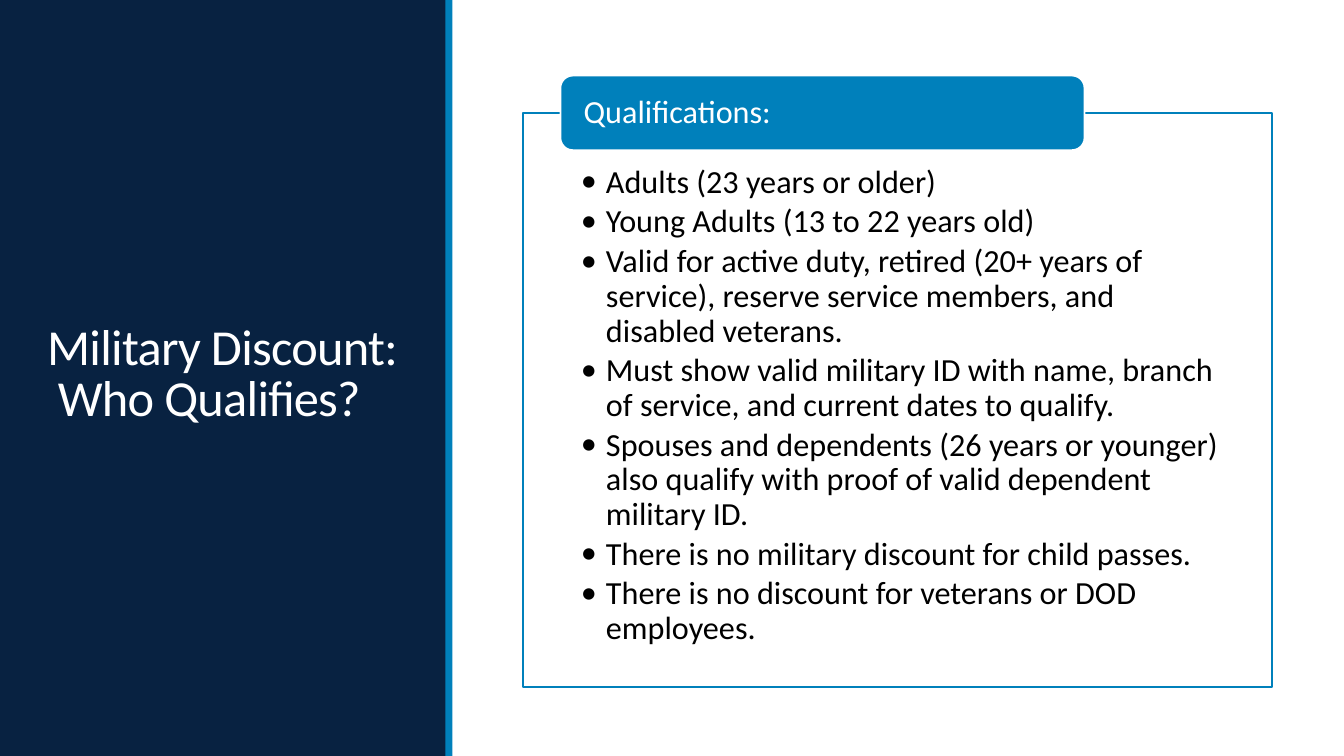
from lxml.etree import SubElement
from pptx import Presentation
from pptx.dml.color import RGBColor
from pptx.enum.shapes import MSO_SHAPE
from pptx.enum.text import MSO_ANCHOR, PP_ALIGN
from pptx.oxml.ns import qn
from pptx.util import Pt

NAVY, BLUE, WHITE, BLACK = "082241", "0080BB", "FFFFFF", "000000"
FONT = "Calibri"
SLIDE_W, SLIDE_H = 960, 540

QUALIFICATIONS = [
    "Adults (23 years or older)",
    "Young Adults (13 to 22 years old)",
    "Valid for active duty, retired (20+ years of service), reserve service "
    "members, and disabled veterans.",
    "Must show valid military ID with name, branch of service, and current "
    "dates to qualify.",
    "Spouses and dependents (26 years or younger) also qualify with proof of "
    "valid dependent military ID.",
    "There is no military discount for child passes.",
    "There is no discount for veterans or DOD employees.",
]


def rgb(color):
    return RGBColor.from_string(color)


def add_box(s, box, fill, line=None, kind=MSO_SHAPE.RECTANGLE):
    sp = s.shapes.add_shape(kind, *map(Pt, box))
    sp.shadow.inherit = False
    sp.fill.solid()
    sp.fill.fore_color.rgb = rgb(fill)
    if line:
        sp.line.color.rgb = rgb(line)
        sp.line.width = Pt(1.25)
    else:
        sp.line.fill.background()
    return sp


def set_text(sp, lines, size, color, insets, anchor, line_spacing=0.9, after=0):
    tf = sp.text_frame
    tf.word_wrap = True
    tf.vertical_anchor = anchor
    tf.margin_left, tf.margin_top, tf.margin_right, tf.margin_bottom = map(Pt, insets)
    for i, line in enumerate(lines):
        p = tf.paragraphs[0] if i == 0 else tf.add_paragraph()
        p.text = line
        p.alignment = PP_ALIGN.LEFT
        p.line_spacing = line_spacing
        p.space_after = Pt(after)
        for r in p.runs:
            r.font.name = FONT
            r.font.size = Pt(size)
            r.font.color.rgb = rgb(color)
    return tf


def add_bullets(tf, indent):
    for p in tf.paragraphs:
        pPr = p._p.get_or_add_pPr()
        pPr.set("marL", str(Pt(indent)))
        pPr.set("indent", str(-Pt(indent)))
        SubElement(pPr, qn("a:buFont"), typeface=FONT)
        SubElement(pPr, qn("a:buChar"), char="•")


def tighten(tf, points):
    for p in tf.paragraphs:
        for r in p.runs:
            r.font._element.set("spc", str(int(points * 100)))


def main():
    prs = Presentation()
    prs.slide_width, prs.slide_height = Pt(SLIDE_W), Pt(SLIDE_H)
    s = prs.slides.add_slide(prs.slide_layouts[6])

    # Side panel with title
    add_box(s, (0, 0, 319, SLIDE_H), NAVY)
    title = s.shapes.add_textbox(Pt(26.6), Pt(41), Pt(273), Pt(454.3))
    tf = set_text(title, ["Military Discount:\v Who Qualifies?"], 36, WHITE,
                  (7.2, 3.6, 7.2, 3.6), MSO_ANCHOR.MIDDLE, line_spacing=0.85)
    tighten(tf, -0.5)
    add_box(s, (318.2, 0, 5, SLIDE_H), BLUE)

    # Framed list of qualifications
    frame = add_box(s, (373.7, 80.6, 535, 410.4), WHITE, BLUE)
    tf = set_text(frame, QUALIFICATIONS, 23, BLACK, (41.2, 37.6, 38, 13),
                  MSO_ANCHOR.TOP, after=3.5)
    add_bullets(tf, 18)

    # Heading tab on the frame
    tab = add_box(s, (400.3, 54, 374.4, 53.3), BLUE, WHITE, MSO_SHAPE.ROUNDED_RECTANGLE)
    set_text(tab, ["Qualifications:"], 23, WHITE, (14, 0, 14, 0), MSO_ANCHOR.MIDDLE)

    prs.save("out.pptx")


if __name__ == "__main__":
    main()
